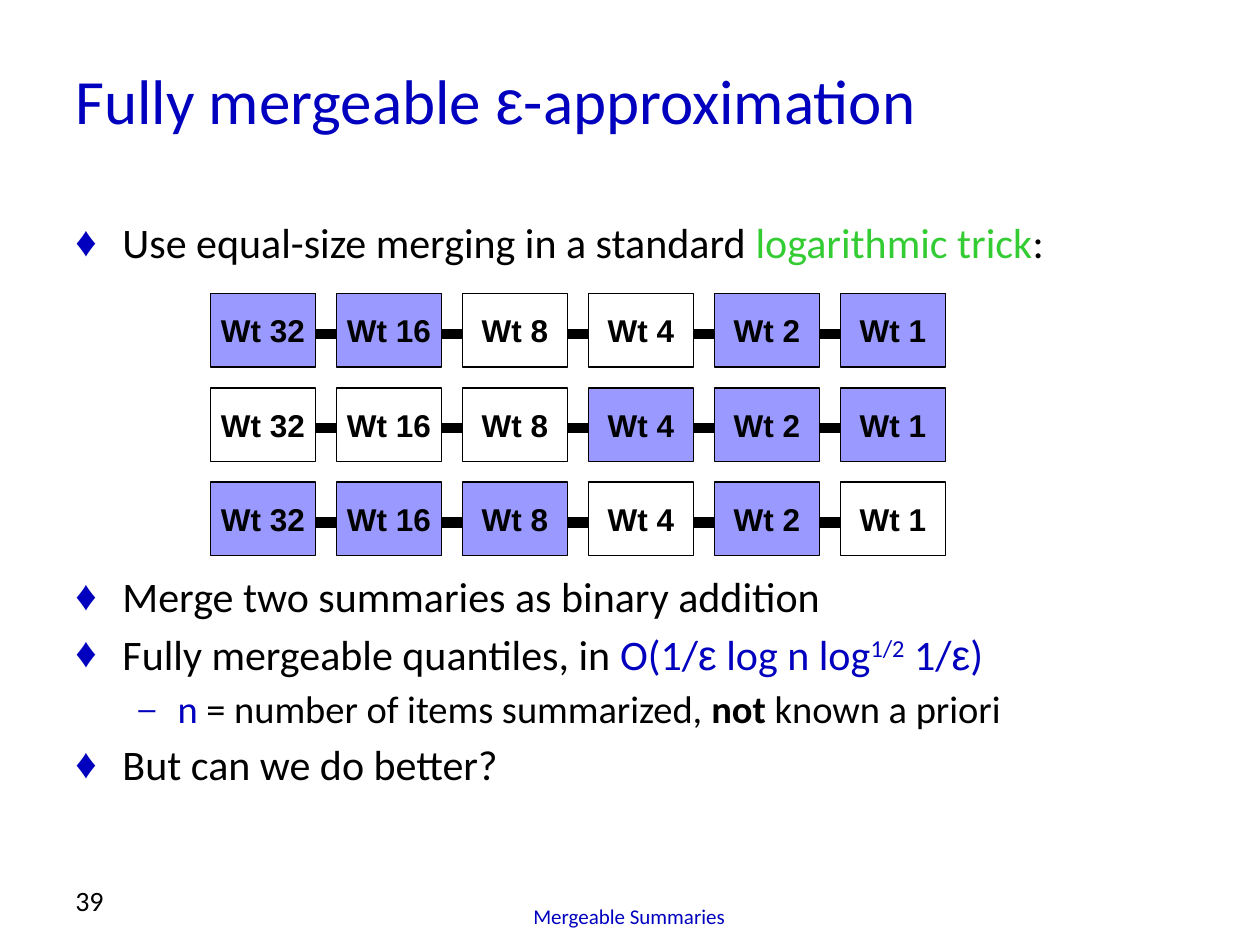
from dataclasses import dataclass

from lxml.etree import SubElement
from pptx import Presentation
from pptx.dml.color import RGBColor
from pptx.enum.shapes import MSO_CONNECTOR as Connector, MSO_SHAPE as Shape
from pptx.enum.text import MSO_ANCHOR as Anchor, PP_ALIGN as Align
from pptx.oxml.ns import qn
from pptx.util import Cm, Pt


@dataclass(frozen=True)
class Theme:
    """Colours, fonts and type sizes of the slide."""
    blue: str = "0000BE"
    green: str = "33CC33"
    black: str = "000000"
    white: str = "FFFFFF"
    lilac: str = "9999FF"
    text_font: str = "Calibri"
    symbol_font: str = "Arial"
    title: int = 36
    body: int = 24
    detail: int = 22
    weight: int = 18
    number: int = 16
    footer: int = 12
    space_before: int = 4


THEME = Theme()
WEIGHTS = (32, 16, 8, 4, 2, 1)
SUMMARIES = ({32, 16, 2, 1}, {4, 2, 1}, {32, 16, 8, 2})
ROW_LEFT, ROW_TOP = 4.24, 5.92
COLUMN_STEP, ROW_STEP = 2.54, 1.9
BOX_WIDTH, BOX_HEIGHT = 2.12, 1.48


def add_run(paragraph, text, size, color=THEME.black, font=THEME.text_font, bold=False, baseline=0):
    """Append one formatted run to a paragraph."""
    run = paragraph.add_run()
    run.text = text
    run.font.name = font
    run.font.size = Pt(size)
    run.font.bold = bold
    run.font.color.rgb = RGBColor.from_string(color)
    if baseline:
        run.font._element.set("baseline", str(baseline * 1000))


def add_text(slide, left, top, width, height, anchor=Anchor.TOP):
    """Add a wrapping text box and return its text frame."""
    frame = slide.shapes.add_textbox(Cm(left), Cm(top), Cm(width), Cm(height)).text_frame
    frame.word_wrap = True
    frame.vertical_anchor = anchor
    return frame


def set_bullet(paragraph, level):
    """Give a paragraph the bullet and indent of its level."""
    character, scale, margin, hanging = (("♦", 100, 0.95, 0.95), ("–", 80, 2.06, 0.79))[level]
    paragraph.level = level
    paragraph.space_before = Pt(THEME.space_before)
    properties = paragraph._p.get_or_add_pPr()
    properties.set("marL", str(Cm(margin)))
    properties.set("indent", str(-Cm(hanging)))
    color = SubElement(properties, qn("a:buClr"))
    SubElement(color, qn("a:srgbClr"), val=THEME.blue)
    SubElement(properties, qn("a:buSzPct"), val=str(scale * 1000))
    SubElement(properties, qn("a:buFont"), typeface=THEME.symbol_font)
    SubElement(properties, qn("a:buChar"), char=character)


def add_bullets(slide, top, height, items):
    """Add a bulleted list of (level, runs), each run a text with its formatting."""
    frame = add_text(slide, 1.27, top, 22.86, height)
    for index, (level, runs) in enumerate(items):
        paragraph = frame.add_paragraph() if index else frame.paragraphs[0]
        set_bullet(paragraph, level)
        size = THEME.detail if level else THEME.body
        for text, formatting in runs:
            add_run(paragraph, text, size, **formatting)


def add_chain(slide, top):
    """Add the thick line that runs behind a row of weight boxes."""
    right = ROW_LEFT + (len(WEIGHTS) - 1) * COLUMN_STEP + BOX_WIDTH
    height = Cm(top + 0.81)
    line = slide.shapes.add_connector(Connector.STRAIGHT, Cm(ROW_LEFT + 0.2), height, Cm(right), height)
    line.line.color.rgb = RGBColor.from_string(THEME.black)
    line.line.width = Pt(6)
    SubElement(line._element.spPr, qn("a:effectLst"))


def add_weight_box(slide, left, top, weight, filled):
    """Add one labelled box, shaded when its weight is in use."""
    box = slide.shapes.add_shape(Shape.RECTANGLE, Cm(left), Cm(top), Cm(BOX_WIDTH), Cm(BOX_HEIGHT))
    box.shadow.inherit = False
    box.fill.solid()
    box.fill.fore_color.rgb = RGBColor.from_string(THEME.lilac if filled else THEME.white)
    box.line.color.rgb = RGBColor.from_string(THEME.black)
    box.line.width = Pt(0.75)
    frame = box.text_frame
    frame.word_wrap = False
    frame.vertical_anchor = Anchor.MIDDLE
    paragraph = frame.paragraphs[0]
    paragraph.alignment = Align.CENTER
    add_run(paragraph, f"Wt {weight}", THEME.weight, font=THEME.symbol_font, bold=True)


def add_summary(slide, top, used_weights):
    """Add a row of weight boxes strung on a line."""
    add_chain(slide, top)
    for column, weight in enumerate(WEIGHTS):
        add_weight_box(slide, ROW_LEFT + column * COLUMN_STEP, top, weight, weight in used_weights)


def add_title(slide):
    """Add the slide title."""
    paragraph = add_text(slide, 1.27, 0.84, 24.13, 2.34, Anchor.MIDDLE).paragraphs[0]
    add_run(paragraph, "Fully mergeable ", THEME.title, THEME.blue)
    add_run(paragraph, "ε", THEME.title, THEME.blue, THEME.symbol_font)
    add_run(paragraph, "-approximation", THEME.title, THEME.blue)


def add_footer(slide):
    """Add the centred footer and the slide number."""
    footer = add_text(slide, 6.55, 17.58, 12.27, 1.27, Anchor.BOTTOM).paragraphs[0]
    footer.alignment = Align.CENTER
    add_run(footer, "Mergeable Summaries", THEME.footer, THEME.blue)
    number = add_text(slide, 1.27, 17.35, 5.92, 1.27, Anchor.BOTTOM).paragraphs[0]
    add_run(number, "39", THEME.number)


def main():
    """Build the slide and save it."""
    presentation = Presentation()
    presentation.slide_width, presentation.slide_height = Cm(25.4), Cm(19.05)
    slide = presentation.slides.add_slide(presentation.slide_layouts[6])
    blue = {"color": THEME.blue}
    symbol = {"color": THEME.blue, "font": THEME.symbol_font}
    add_title(slide)
    add_bullets(slide, 4.24, 1.3, [
        (0, [("Use equal-size merging in a standard ", {}),
             ("logarithmic trick", {"color": THEME.green}), (":", {})]),
    ])
    for row, used_weights in enumerate(SUMMARIES):
        add_summary(slide, ROW_TOP + row * ROW_STEP, used_weights)
    add_bullets(slide, 11.38, 4.92, [
        (0, [("Merge two summaries as binary addition", {})]),
        (0, [("Fully mergeable quantiles, in ", {}), ("O(1/", blue), ("ε", symbol),
             (" log n log", blue), ("1/2", {**blue, "baseline": 30}),
             (" 1/", blue), ("ε", symbol), (")", blue)]),
        (1, [("n", blue), (" = number of items summarized, ", {}),
             ("not", {"bold": True}), (" known a priori", {})]),
        (0, [("But can we do better?", {})]),
    ])
    add_footer(slide)
    presentation.save("out.pptx")


if __name__ == "__main__":
    main()
